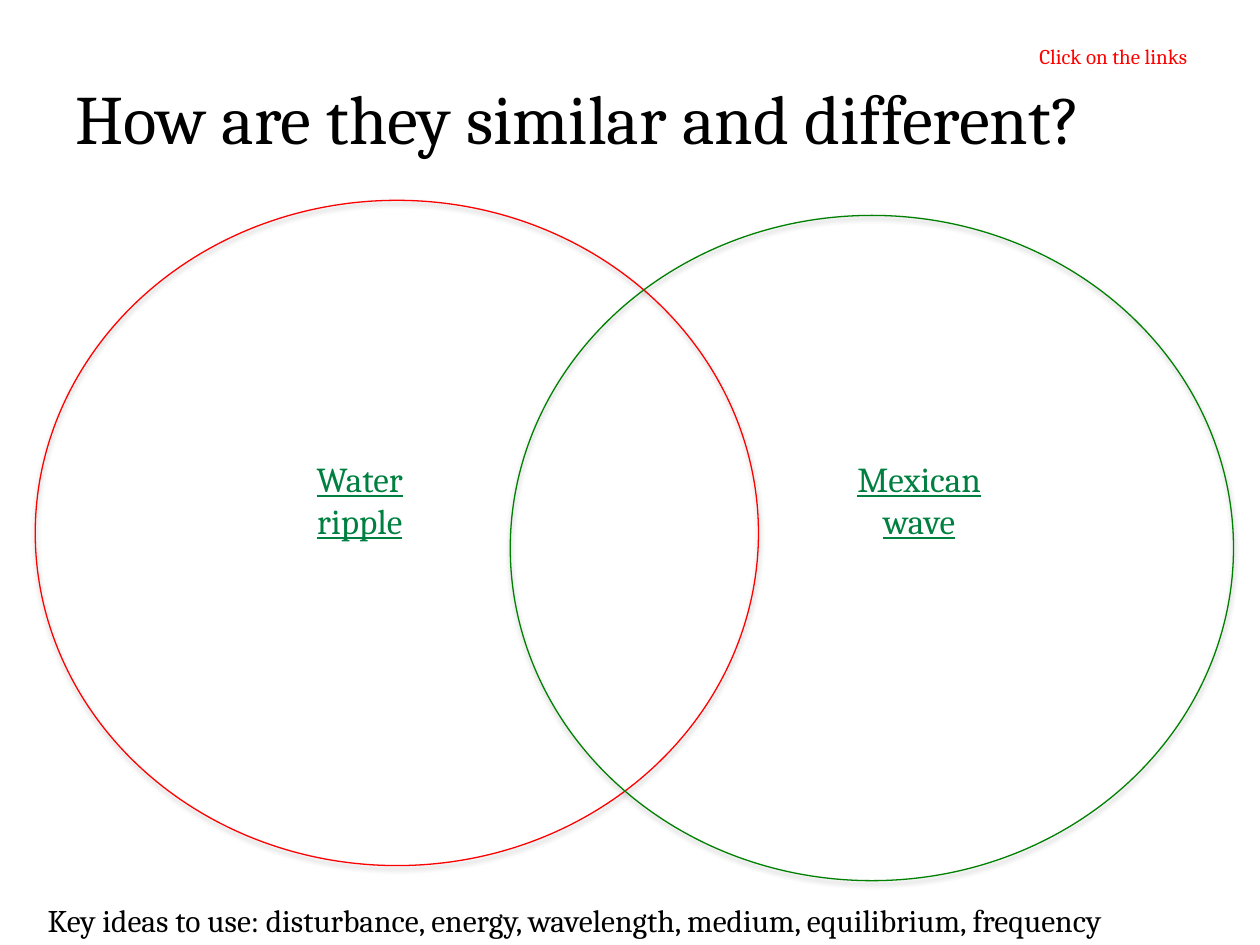
"""Build a Venn diagram slide comparing a water ripple with a Mexican wave."""
from dataclasses import dataclass

from lxml import etree
from pptx import Presentation
from pptx.dml.color import RGBColor
from pptx.enum import shapes, text
from pptx.oxml import ns
from pptx.util import Inches, Pt

FONT = "Cambria"
BLACK = RGBColor(0x00, 0x00, 0x00)
RED = RGBColor(0xFF, 0x00, 0x00)
GREEN = RGBColor(0x00, 0x80, 0x00)
LINK_GREEN = RGBColor(0x00, 0x80, 0x40)
LEFT = text.PP_ALIGN.LEFT
CENTER = text.PP_ALIGN.CENTER


@dataclass
class Circle:
    left: float
    top: float
    color: RGBColor


@dataclass
class Label:
    wording: str
    left: float
    top: float
    width: float
    height: float
    size: float
    color: RGBColor
    align: text.PP_ALIGN = LEFT
    underline: bool = False
    hanging: float = 0


CIRCLES = [Circle(0.28, 1.59, RED), Circle(4.05, 1.71, GREEN)]
TITLE = Label("How are they similar and different?", 0.5, 0.3, 9, 1.25, 39.6, BLACK)
LABELS = [
    Label("Mexican wave", 6.64, 3.58, 1.31, 0.77, 20, LINK_GREEN, CENTER, True),
    Label("Water ripple", 2.2, 3.58, 1.31, 0.77, 20, LINK_GREEN, CENTER, True),
    Label("Click on the links", 8.15, 0.3, 1.64, 0.3, 12, RED),
    Label("Key ideas to use: disturbance, energy, wavelength, medium, equilibrium, frequency",
          0.28, 7.1, 10, 0.4, 18, BLACK, hanging=0.38),
]


def add_shadow(shape) -> None:
    shape.shadow.inherit = False
    effects = shape._element.spPr.find(ns.qn("a:effectLst"))
    shadow = etree.SubElement(effects, ns.qn("a:outerShdw"), blurRad=str(Pt(3.1)),
                              dist=str(Pt(1.8)), dir="5400000", rotWithShape="0")
    color = etree.SubElement(shadow, ns.qn("a:srgbClr"), val="000000")
    etree.SubElement(color, ns.qn("a:alpha"), val="35000")


def add_circle(page, circle: Circle) -> None:
    shape = page.shapes.add_shape(shapes.MSO_SHAPE.OVAL, Inches(circle.left),
                                  Inches(circle.top), Inches(5.74), Inches(5.28))
    shape.fill.background()
    shape.line.color.rgb = circle.color
    shape.line.width = Pt(0.75)
    add_shadow(shape)


def write_label(box, label: Label) -> None:
    box.text_frame.text = label.wording
    box.text_frame.word_wrap = True
    para = box.text_frame.paragraphs[0]
    para.alignment = label.align
    if label.hanging:
        properties = para._p.get_or_add_pPr()
        properties.set("marL", str(Inches(label.hanging)))
        properties.set("indent", str(-Inches(label.hanging)))
    font = para.runs[0].font
    font.name = FONT
    font.size = Pt(label.size)
    font.color.rgb = label.color
    if label.underline:
        font.underline = True


def place_title(page, label: Label) -> None:
    box = page.shapes.title
    box.left, box.top = Inches(label.left), Inches(label.top)
    box.width, box.height = Inches(label.width), Inches(label.height)
    write_label(box, label)
    box.text_frame.auto_size = text.MSO_AUTO_SIZE.NONE
    box.text_frame.vertical_anchor = text.MSO_ANCHOR.MIDDLE


def add_label(page, label: Label) -> None:
    box = page.shapes.add_textbox(Inches(label.left), Inches(label.top),
                                  Inches(label.width), Inches(label.height))
    write_label(box, label)
    box.text_frame.auto_size = text.MSO_AUTO_SIZE.SHAPE_TO_FIT_TEXT


def main() -> None:
    deck = Presentation()
    deck.slide_width, deck.slide_height = Inches(10), Inches(7.5)
    page = deck.slides.add_slide(deck.slide_layouts[5])
    place_title(page, TITLE)
    for circle in CIRCLES:
        add_circle(page, circle)
    for label in LABELS:
        add_label(page, label)
    deck.save("out.pptx")


if __name__ == "__main__":
    main()
